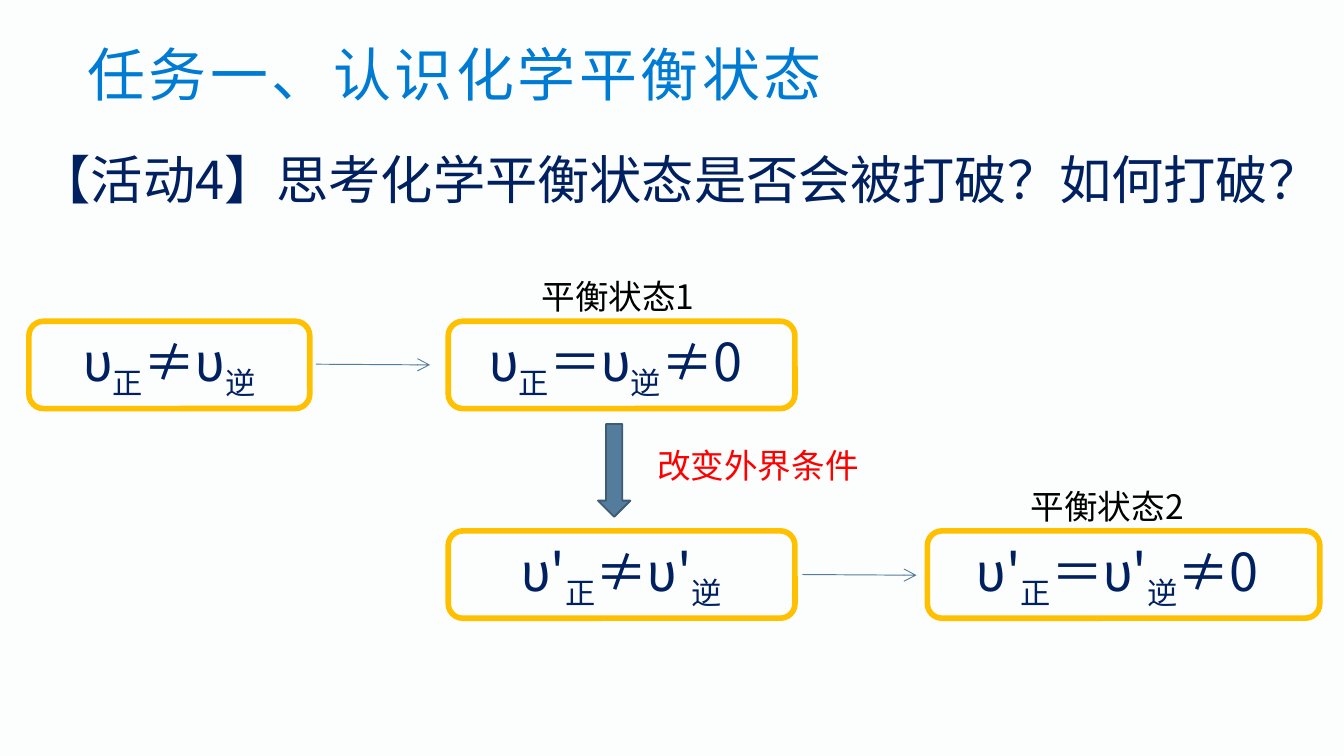
"""Build a slide on how a chemical equilibrium is broken and reached again."""
from dataclasses import dataclass
from lxml.etree import SubElement
from pptx import Presentation
from pptx.dml.color import RGBColor as RGB
from pptx.enum.shapes import MSO_CONNECTOR as LINK, MSO_SHAPE as SHAPE
from pptx.enum.text import MSO_ANCHOR as ANCHOR, MSO_AUTO_SIZE as FIT, PP_ALIGN as ALIGN
from pptx.oxml.ns import qn
from pptx.util import Pt

PX = 4572


@dataclass(frozen=True)
class Theme:
    paper: str = "FCFDFD"
    title: str = "007BD3"
    navy: str = "002060"
    gold: str = "FFC000"
    steel: str = "547D9D"
    edge: str = "3E5C74"
    black: str = "000000"
    red: str = "FF0000"
    head: int = 31
    body: int = 28
    note: int = 18
    font: str = "Noto Sans CJK SC"
    latin: str = "Arial"


theme = Theme()


def add_run(para, text, size, color, face=theme.font):
    run = para.add_run()
    run.text = text
    run.font.size = Pt(size)
    run.font.color.rgb = RGB.from_string(color)
    run.font.name = face
    SubElement(run.font._element, qn("a:ea")).set("typeface", theme.font)
    return run.font._element


def add_text(x, y, w, h, text, size, color, face=theme.font):
    box = slide.shapes.add_textbox(x * PX, y * PX, w * PX, h * PX)
    box.text_frame.word_wrap = True
    para = box.text_frame.paragraphs[0]
    add_run(para, text, size, color, face)
    return para


deck = Presentation()
deck.slide_width, deck.slide_height = 2000 * PX, 1125 * PX
slide = deck.slides.add_slide(deck.slide_layouts[5])
slide.background.fill.solid()
slide.background.fill.fore_color.rgb = RGB.from_string(theme.paper)

title = slide.shapes.title
title.left, title.top, title.width, title.height = 110 * PX, 73 * PX, 1780 * PX, 72 * PX
frame = title.text_frame
frame.auto_size = FIT.NONE
frame.vertical_anchor = ANCHOR.MIDDLE
para = frame.paragraphs[0]
para.alignment = ALIGN.LEFT
add_run(para, "任务一、认识化学平衡状态", theme.head, theme.title).set("spc", "200")

task = add_text(38, 182, 1962, 142, "【活动4】思考化学平衡状态是否会被打破？如何打破？", theme.body, theme.navy)
task.line_spacing = 1.3

states = [
    (43, 478, 418, ["υ", "正", "≠υ", "逆"]),
    (667, 478, 516, ["υ", "正", "＝υ", "逆", "≠0 "]),
    (667, 790, 516, ["υ'", "正", "≠υ'", "逆"]),
    (1380, 790, 584, ["υ'", "正", "＝υ'", "逆", "≠0 "]),
]
for x, y, w, parts in states:
    box = slide.shapes.add_shape(SHAPE.ROUNDED_RECTANGLE, x * PX, y * PX, w * PX, 130 * PX)
    box.shadow.inherit = False
    box.fill.background()
    box.line.color.rgb = RGB.from_string(theme.gold)
    box.line.width = Pt(3)
    box.text_frame.vertical_anchor = ANCHOR.MIDDLE
    para = box.text_frame.paragraphs[0]
    para.alignment = ALIGN.CENTER
    for part in parts:
        props = add_run(para, part, theme.body, theme.navy)
        if part in ("正", "逆"):
            props.set("baseline", "-25000")

for x, y in [(470, 542), (1194, 855)]:
    link = slide.shapes.add_connector(LINK.STRAIGHT, x * PX, y * PX, (x + 170) * PX, (y + 1) * PX)
    link.line.color.rgb = RGB.from_string(theme.steel)
    link.line.width = Pt(0.5)
    SubElement(link.line._get_or_add_ln(), qn("a:tailEnd")).set("type", "arrow")
    SubElement(link._element.spPr, qn("a:effectLst"))

down = slide.shapes.add_shape(SHAPE.DOWN_ARROW, 890 * PX, 631 * PX, 48 * PX, 138 * PX)
down.shadow.inherit = False
down.fill.solid()
down.fill.fore_color.rgb = RGB.from_string(theme.steel)
down.line.color.rgb = RGB.from_string(theme.edge)
down.line.width = Pt(1)

notes = [
    (786, 401, 316, "平衡状态1", theme.black, theme.font),
    (1514, 714, 316, "平衡状态2", theme.black, theme.font),
    (958, 652, 382, "改变外界条件", theme.red, theme.latin),
]
for x, y, w, text, color, face in notes:
    add_text(x, y, w, 80, text, theme.note, color, face)

deck.save("out.pptx")
